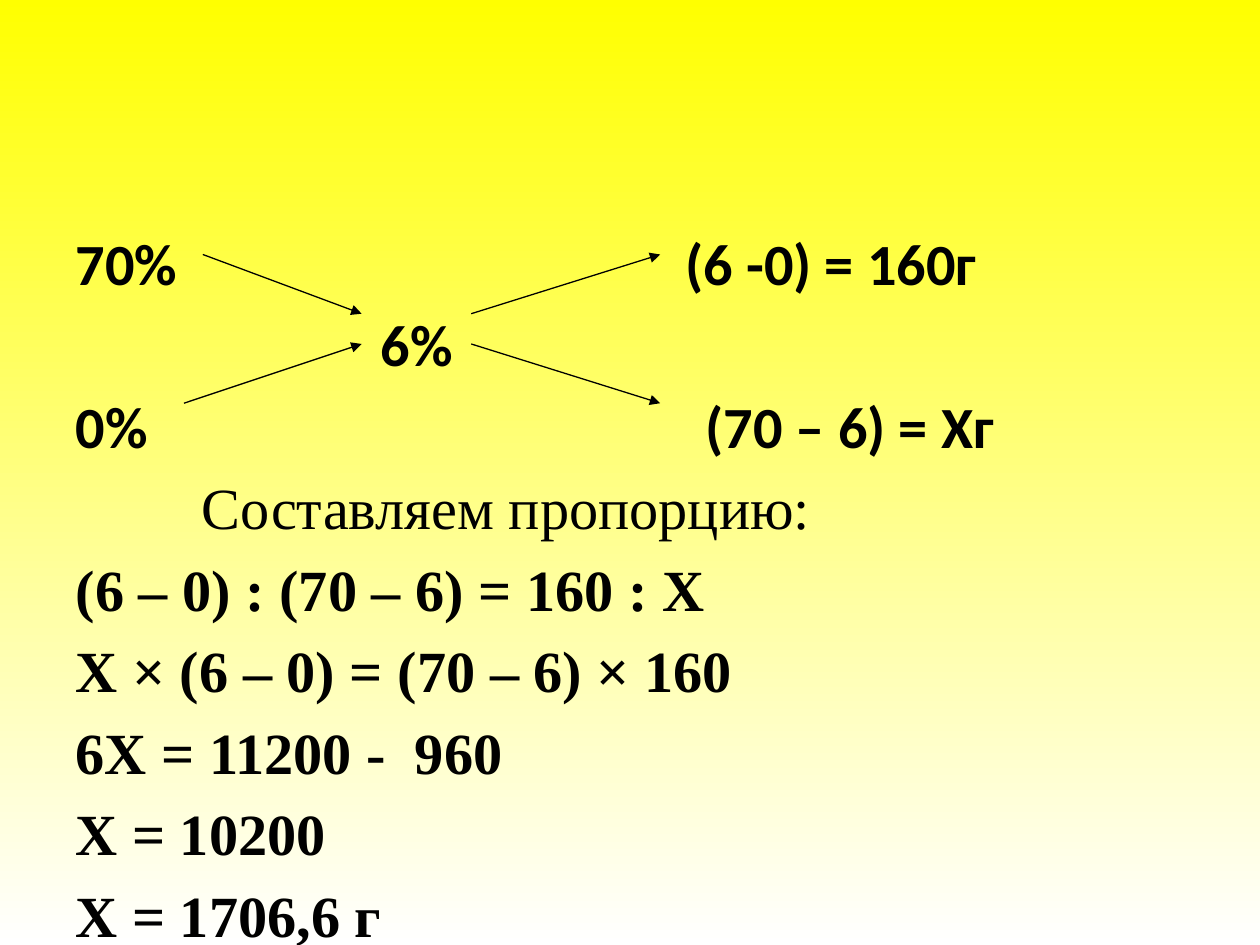
import pptx
import pptx.util
import pptx.dml.color
import pptx.enum.shapes
import pptx.enum.text
import pptx.oxml.ns
import lxml.etree

Inches = pptx.util.Inches
Pt = pptx.util.Pt
qn = pptx.oxml.ns.qn

THEME = {
    "ink": pptx.dml.color.RGBColor(0, 0, 0),
    "top": pptx.dml.color.RGBColor(255, 255, 0),
    "base": pptx.dml.color.RGBColor(255, 255, 255),
    "sans": "Calibri",
    "serif": "Times New Roman",
    "size": Pt(33.3),
    "gap": Pt(6.6),
    "line": Pt(0.75),
}

BODY = (0.5, 1.75, 9, 4.95)

LINES = [
    ("70%\t(6 -0) = 160г", "sans", True, 4.84),
    ("\t6%", "sans", True, 2.42),
    ("0%\t(70 – 6) = Хг", "sans", True, 5),
    ("\tСоставляем пропорцию:", "serif", False, 1),
    ("(6 – 0) : (70 – 6) = 160 : Х", "serif", True, 1),
    ("Х × (6 – 0) = (70 – 6) × 160", "serif", True, 1),
    ("6Х = 11200 -  960", "serif", True, 1),
    ("Х = 10200", "serif", True, 1),
    ("Х = 1706,6 г", "serif", True, 1),
]

ROWS = (2.02, 2.49, 2.73, 3.2)
ARROWS = [
    ((1.61, ROWS[0]), (2.87, ROWS[1])),
    ((3.74, ROWS[2]), (5.24, ROWS[3])),
    ((1.46, ROWS[3]), (2.87, ROWS[2])),
    ((3.74, ROWS[1]), (5.24, ROWS[0])),
]


def paint(slide):
    fill = slide.background.fill
    fill.gradient()
    fill.gradient_angle = 270
    for stop, pos, tone in zip(fill.gradient_stops, (0, 1), ("top", "base")):
        stop.position = pos
        stop.color.rgb = THEME[tone]


def write(par, text, face, bold, tab):
    par.space_before = THEME["gap"]
    props = par._p.get_or_add_pPr()
    props.set("marL", "0")
    props.set("indent", "0")
    props.set("defTabSz", str(Inches(tab)))
    lxml.etree.SubElement(props, qn("a:buNone"))
    run = par.add_run()
    run.text = text
    font = run.font
    font.name, font.size, font.bold = THEME[face], THEME["size"], bold
    font.color.rgb = THEME["ink"]


def fill_body(body):
    body.left, body.top, body.width, body.height = map(Inches, BODY)
    frame = body.text_frame
    frame.word_wrap = True
    frame.auto_size = pptx.enum.text.MSO_AUTO_SIZE.NONE
    frame.vertical_anchor = pptx.enum.text.MSO_ANCHOR.TOP
    for i, line in enumerate(LINES):
        par = frame.add_paragraph() if i else frame.paragraphs[0]
        write(par, *line)


def arrow(slide, start, end):
    kind = pptx.enum.shapes.MSO_CONNECTOR.STRAIGHT
    link = slide.shapes.add_connector(kind, *map(Inches, start + end))
    link.line.color.rgb = THEME["ink"]
    link.line.width = THEME["line"]
    lxml.etree.SubElement(link.line._get_or_add_ln(), qn("a:tailEnd"), type="triangle")
    lxml.etree.SubElement(link._element.spPr, qn("a:effectLst"))


def main():
    deck = pptx.Presentation()
    deck.slide_width, deck.slide_height = Inches(10), Inches(7.5)
    slide = deck.slides.add_slide(deck.slide_layouts[1])
    title = slide.shapes.title._element
    title.getparent().remove(title)
    paint(slide)
    fill_body(slide.placeholders[1])
    for start, end in ARROWS:
        arrow(slide, start, end)
    deck.save("out.pptx")


if __name__ == "__main__":
    main()
